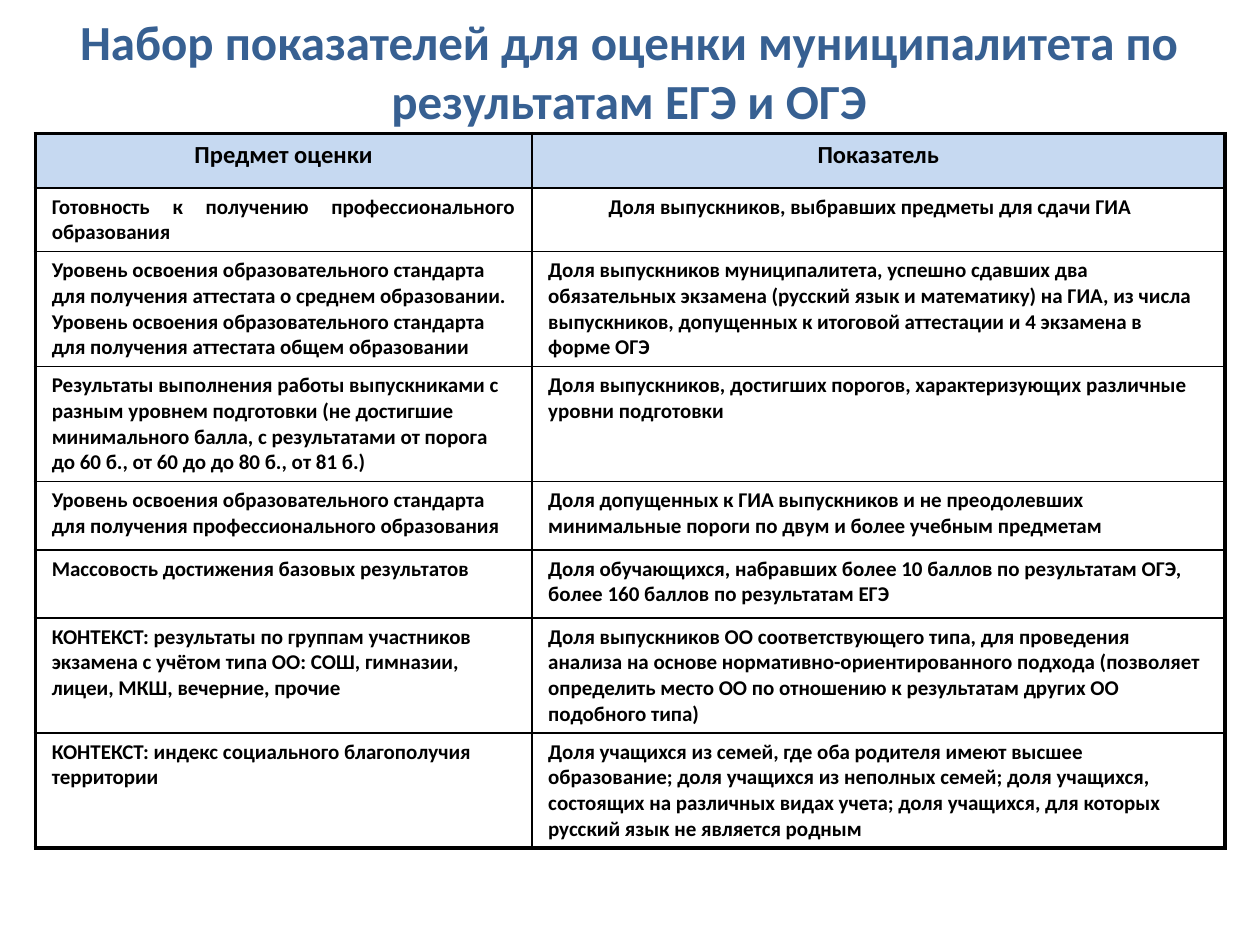
from dataclasses import dataclass
from lxml.etree import SubElement
from pptx import Presentation
from pptx.dml.color import RGBColor
from pptx.enum.text import PP_ALIGN
from pptx.oxml.ns import qn
from pptx.slide import Slide
from pptx.table import _Cell
from pptx.text.text import TextFrame
from pptx.util import Pt


@dataclass(frozen=True)
class Theme:
    font: str = "Calibri"
    title: str = "376092"
    ink: str = "000000"
    head: str = "C6D9F1"
    body: str = "FFFFFF"
    big: float = 28
    mid: float = 14
    small: float = 12
    thick: float = 2.25
    thin: float = 1


@dataclass(frozen=True)
class Row:
    height: float
    subject: str
    measure: str
    aligns: tuple = (PP_ALIGN.LEFT, PP_ALIGN.LEFT)
    inset: float = 9.4


THEME = Theme()
WIDTHS = (283.7, 396)
ROWS = (
    Row(31, "Предмет оценки", "Показатель", (PP_ALIGN.CENTER, PP_ALIGN.CENTER)),
    Row(31, "Готовность к получению профессионального образования",
        "Доля выпускников, выбравших предметы для сдачи ГИА",
        (PP_ALIGN.JUSTIFY, PP_ALIGN.CENTER), 0),
    Row(54, "Уровень освоения образовательного стандарта для получения аттестата "
        "о среднем образовании. Уровень освоения образовательного стандарта "
        "для получения аттестата общем образовании",
        "Доля выпускников муниципалитета, успешно сдавших два обязательных экзамена "
        "(русский язык и математику) на ГИА, из числа выпускников, допущенных "
        "к итоговой аттестации и 4 экзамена в форме ОГЭ"),
    Row(47.5, "Результаты выполнения работы выпускниками с разным уровнем подготовки "
        "(не достигшие минимального балла, с результатами от порога до 60 б., "
        "от 60 до до 80 б., от 81 б.)",
        "Доля выпускников, достигших порогов, характеризующих различные "
        "уровни подготовки"),
    Row(39, "Уровень освоения образовательного стандарта для получения "
        "профессионального образования",
        "Доля допущенных к ГИА выпускников и не преодолевших минимальные пороги "
        "по двум и более учебным предметам"),
    Row(39, "Массовость достижения базовых результатов",
        "Доля обучающихся, набравших более 10 баллов по результатам ОГЭ, "
        "более 160 баллов по результатам ЕГЭ"),
    Row(65.5, "КОНТЕКСТ: результаты по группам участников экзамена с учётом типа ОО: "
        "СОШ, гимназии, лицеи, МКШ, вечерние, прочие",
        "Доля выпускников ОО соответствующего типа, для проведения анализа "
        "на основе нормативно-ориентированного подхода (позволяет определить место "
        "ОО по отношению к результатам других ОО подобного типа)"),
    Row(65.5, "КОНТЕКСТ: индекс социального благополучия территории",
        "Доля учащихся из семей, где оба родителя имеют высшее образование; "
        "доля учащихся из неполных семей; доля учащихся, состоящих на различных "
        "видах учета; доля учащихся, для которых русский язык не является родным"),
)


def assign(item: object, values: dict) -> None:
    for name, value in values.items():
        setattr(item, name, value)


def write(frame: TextFrame, text: str, size: float, color: str, align: PP_ALIGN) -> None:
    frame.word_wrap = True
    para = frame.paragraphs[0]
    para.alignment = align
    run = para.add_run()
    run.text = text
    assign(run.font, {"name": THEME.font, "size": Pt(size), "bold": True})
    run.font.color.rgb = RGBColor.from_string(color)


def border(cell: _Cell, outer: dict[str, bool]) -> None:
    props = cell._tc.get_or_add_tcPr()
    for side, edge in outer.items():
        width = THEME.thick if edge else THEME.thin
        line = SubElement(props, qn(f"a:ln{side}"), w=str(int(Pt(width))))
        fill = SubElement(line, qn("a:solidFill"))
        SubElement(fill, qn("a:srgbClr"), val=THEME.ink)


def draw_table(slide: Slide) -> None:
    frame = slide.shapes.add_table(
        len(ROWS), len(WIDTHS), Pt(20.2), Pt(76.3), Pt(sum(WIDTHS)), Pt(406))
    table = frame.table
    assign(table, {"first_row": False, "horz_banding": False})
    for col, width in zip(table.columns, WIDTHS):
        col.width = Pt(width)
    for i, row in enumerate(ROWS):
        table.rows[i].height = Pt(row.height)
        for j, text in enumerate((row.subject, row.measure)):
            cell = table.cell(i, j)
            assign(cell, {
                "margin_left": Pt(row.inset if j else 9.4), "margin_right": Pt(9.4),
                "margin_top": Pt(3.6), "margin_bottom": Pt(3.6)})
            size = THEME.small if i else THEME.mid
            write(cell.text_frame, text, size, THEME.ink, row.aligns[j])
            border(cell, {"L": j == 0, "R": j == len(WIDTHS) - 1,
                          "T": i == 0, "B": i == len(ROWS) - 1})
            cell.fill.solid()
            cell.fill.fore_color.rgb = RGBColor.from_string(THEME.body if i else THEME.head)
    frame.height = Pt(406)


def draw_title(slide: Slide) -> None:
    box = slide.shapes.add_textbox(Pt(-1.4), Pt(2.9), Pt(721.4), Pt(75))
    write(box.text_frame, "Набор показателей для оценки муниципалитета по результатам ЕГЭ и ОГЭ",
          THEME.big, THEME.title, PP_ALIGN.CENTER)


def main() -> None:
    deck = Presentation()
    assign(deck, {"slide_width": Pt(720), "slide_height": Pt(540)})
    slide = deck.slides.add_slide(deck.slide_layouts[6])
    draw_table(slide)
    draw_title(slide)
    deck.save("out.pptx")


if __name__ == "__main__":
    main()
